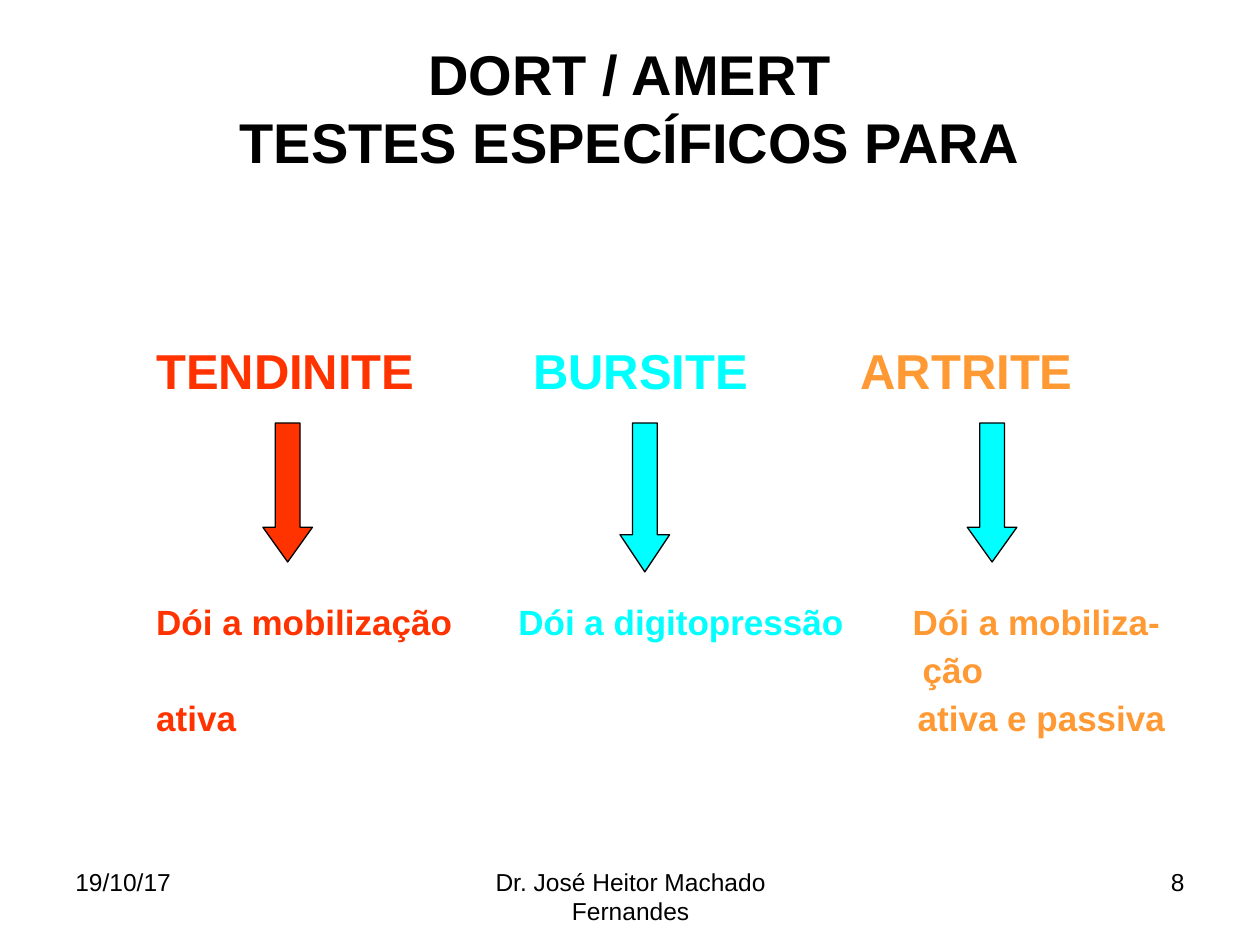
from lxml.etree import SubElement
from pptx import Presentation
from pptx.dml.color import RGBColor
from pptx.enum.shapes import MSO_SHAPE
from pptx.enum.text import MSO_ANCHOR, PP_ALIGN
from pptx.oxml.ns import qn
from pptx.util import Cm, Pt

HUES = {"black": "000000", "red": "FF3300", "cyan": "00FFFF", "gold": "FF9933"}

deck = Presentation()
deck.slide_width, deck.slide_height = Cm(25.4), Cm(19.05)
slide = deck.slides.add_slide(deck.slide_layouts[6])


def add_box(left, top, width, height):
    box = slide.shapes.add_textbox(Cm(left), Cm(top), Cm(width), Cm(height))
    box.text_frame.word_wrap = True
    return box.text_frame


def add_run(para, text, size, hue="black", bold=False):
    run = para.add_run()
    run.text = text
    font = run.font
    font.name, font.size, font.bold = "Arial", Pt(size), bold
    font.color.rgb = RGBColor.from_string(HUES[hue])


footers = [
    (1.27, 5.92, "19/10/17", PP_ALIGN.LEFT),
    (8.69, 8.05, "Dr. José Heitor Machado Fernandes", PP_ALIGN.CENTER),
    (18.21, 5.92, "8", PP_ALIGN.RIGHT),
]
for left, width, text, align in footers:
    para = add_box(left, 17.35, width, 1.32).paragraphs[0]
    para.alignment = align
    add_run(para, text, 14)

title = add_box(1.27, 1.4, 22.86, 2.54)
title.vertical_anchor = MSO_ANCHOR.MIDDLE
title.margin_bottom = Cm(1.15)
para = title.paragraphs[0]
para.alignment = PP_ALIGN.CENTER
add_run(para, "DORT / AMERT", 32, bold=True)
para.add_line_break()
add_run(para, "TESTES ESPECÍFICOS PARA", 32, bold=True)

rows = [
    (28, 0, [7.6, 14.2],
     [("TENDINITE", "red"), ("\tBURSITE", "cyan"), ("\tARTRITE", "gold")]),
    (20, 117, [7.3, 15.25],
     [("Dói a mobilização", "red"), ("\tDói a digitopressão", "cyan"),
      ("\tDói a mobiliza-", "gold")]),
    (20, 6, [15.45], [("\tção", "gold")]),
    (20, 6, [15.35], [("ativa", "red"), ("\tativa e passiva", "gold")]),
]
body = add_box(2.9, 6.32, 21, 10.8)
body.margin_top = Cm(0.68)
for num, (size, gap, stops, parts) in enumerate(rows):
    para = body.add_paragraph() if num else body.paragraphs[0]
    para.line_spacing = 0.9
    if gap:
        para.space_before = Pt(gap)
    tabs = SubElement(para._p.get_or_add_pPr(), qn("a:tabLst"))
    for stop in stops:
        SubElement(tabs, qn("a:tab"), pos=str(Cm(stop)), algn="l")
    for text, hue in parts:
        add_run(para, text, size, hue, True)

arrows = [(5.3, 2.8, 0.7, "red"), (12.5, 3, 0.75, "cyan"), (19.5, 2.8, 0.7, "cyan")]
for left, height, head, hue in arrows:
    arrow = slide.shapes.add_shape(
        MSO_SHAPE.DOWN_ARROW, Cm(left), Cm(8.53), Cm(1), Cm(height))
    arrow.shadow.inherit = False
    arrow.adjustments[0] = 0.5
    arrow.adjustments[1] = head
    arrow.fill.solid()
    arrow.fill.fore_color.rgb = RGBColor.from_string(HUES[hue])
    arrow.line.color.rgb = RGBColor.from_string(HUES["black"])
    arrow.line.width = Pt(0.75)

deck.save("out.pptx")
